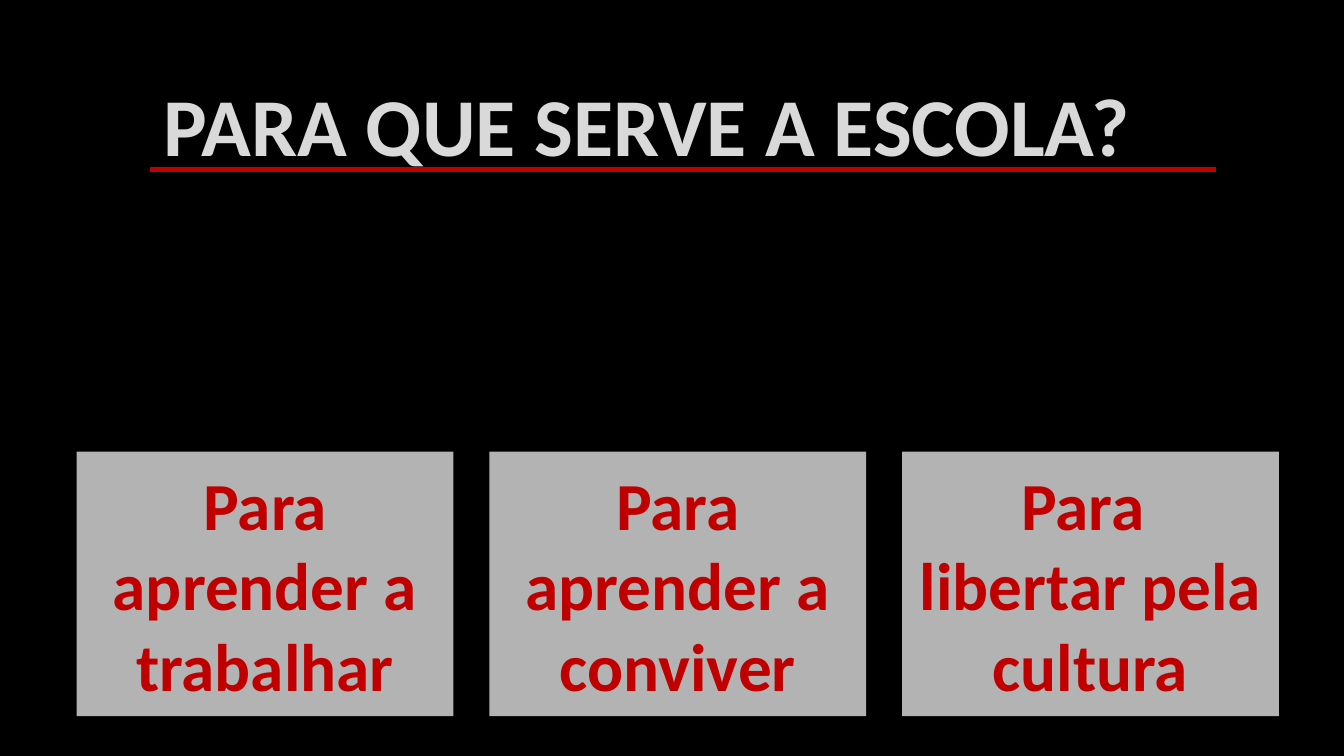
"""Build a slide that asks what school is for and gives three answers."""
from lxml import etree
from pptx import Presentation
from pptx import util as u
from pptx.dml import color
from pptx.enum import shapes, text
from pptx.oxml import ns

HUES = {"back": "000000", "title": "D9D9D9", "red": "C00000", "box": "FFFFFF"}


def hue(name):
    return color.RGBColor.from_string(HUES[name])


def write(shape, words, size, tint, align, anchor):
    frame = shape.text_frame
    frame.word_wrap = True
    frame.auto_size = text.MSO_AUTO_SIZE.NONE
    frame.vertical_anchor = anchor
    frame.text = words
    for para in frame.paragraphs:
        para.alignment = align
        font = para.runs[0].font
        font.name, font.size, font.bold = "Calibri", u.Pt(size), True
        font.color.rgb = hue(tint)


deck = Presentation()
deck.slide_width, deck.slide_height = u.Cm(25.4), u.Cm(14.28)
slide = deck.slides.add_slide(deck.slide_layouts[5])
slide.background.fill.solid()
slide.background.fill.fore_color.rgb = hue("back")

left, wide = 2.84, 20.14
title = slide.shapes.title
title.left, title.top = u.Cm(left), u.Cm(1.27)
title.width, title.height = u.Cm(wide), u.Cm(2.13)
write(title, "PARA QUE SERVE A ESCOLA?", size=44, tint="title",
      align=text.PP_ALIGN.LEFT, anchor=text.MSO_ANCHOR.TOP)

rule = slide.shapes.add_connector(
    shapes.MSO_CONNECTOR.STRAIGHT,
    u.Cm(left), u.Cm(3.2), u.Cm(left + wide), u.Cm(3.2))
rule.line.color.rgb = hue("red")
rule.line.width = u.Pt(3)
etree.SubElement(rule._element.spPr, ns.qn("a:effectLst"))

goals = [
    "Para aprender a trabalhar",
    "Para aprender a conviver",
    "Para \nlibertar pela cultura",
]
for i, goal in enumerate(goals):
    box = slide.shapes.add_shape(
        shapes.MSO_SHAPE.RECTANGLE,
        u.Cm(1.45 + 7.8 * i), u.Cm(8.53), u.Cm(7.12), u.Cm(5))
    box.shadow.inherit = False
    box.line.fill.background()
    box.fill.solid()
    box.fill.fore_color.rgb = hue("box")
    shade = box._element.spPr.find(".//" + ns.qn("a:srgbClr"))
    etree.SubElement(shade, ns.qn("a:alpha"), val="70000")
    write(box, goal, size=36, tint="red",
          align=text.PP_ALIGN.CENTER, anchor=text.MSO_ANCHOR.MIDDLE)

deck.save("out.pptx")
